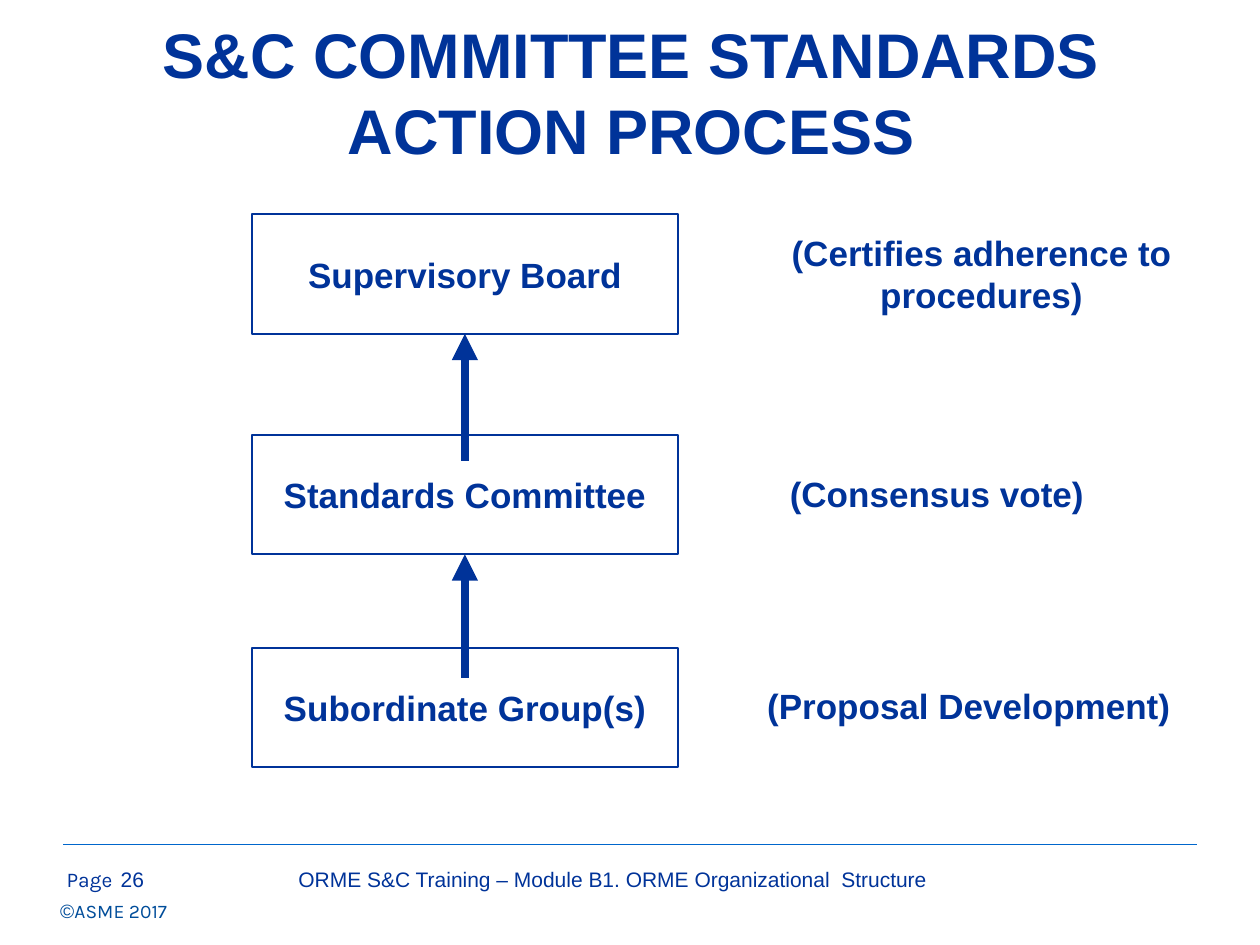
from lxml import etree
from pptx import Presentation
from pptx.dml.color import RGBColor
from pptx.enum.shapes import MSO_CONNECTOR, MSO_SHAPE
from pptx.enum.text import MSO_ANCHOR, PP_ALIGN
from pptx.oxml.ns import qn
from pptx.util import Inches, Pt

NAVY = "003399"
BOX_LEFT, BOX_WIDTH, BOX_HEIGHT = 2, 3.38, 0.95
LEVELS = [
    ("Supervisory Board", 1.7),
    ("Standards Committee", 3.45),
    ("Subordinate Group(s)", 5.14),
]
ROLES = [
    ("(Certifies adherence to procedures)", (5.83, 1.79, 3.92, 0.77), PP_ALIGN.CENTER),
    ("(Consensus vote)", (6.17, 3.7, 3.16, 0.43), PP_ALIGN.LEFT),
    ("(Proposal Development)", (5.99, 5.38, 3.51, 0.44), PP_ALIGN.LEFT),
]
ARROW_TAILS = [3.66, 5.38]


def paint(color_format, value):
    color_format.rgb = RGBColor.from_string(value)


def write(tf, text, size, bold=False, align=PP_ALIGN.LEFT, font="Arial", color=NAVY):
    tf.word_wrap = True
    p = tf.paragraphs[0]
    p.alignment = align
    p.add_run().text = text
    p.font.size = Pt(size)
    p.font.bold = bold
    p.font.name = font
    paint(p.font.color, color)


def add_text(slide, at, text, size, **style):
    sp = slide.shapes.add_textbox(*map(Inches, at))
    write(sp.text_frame, text, size, **style)
    return sp.text_frame


def add_box(slide, text, top):
    sp = slide.shapes.add_shape(
        MSO_SHAPE.RECTANGLE,
        *map(Inches, (BOX_LEFT, top, BOX_WIDTH, BOX_HEIGHT)),
    )
    sp.shadow.inherit = False
    sp.fill.background()
    paint(sp.line.color, NAVY)
    sp.line.width = Pt(1)
    write(sp.text_frame, text, 20, bold=True, align=PP_ALIGN.CENTER)
    sp.text_frame.vertical_anchor = MSO_ANCHOR.MIDDLE
    return sp


def add_line(slide, start, end, color, width):
    line = slide.shapes.add_connector(
        MSO_CONNECTOR.STRAIGHT, *map(Inches, (*start, *end))
    )
    paint(line.line.color, color)
    line.line.width = Pt(width)
    etree.SubElement(line._element.spPr, qn("a:effectLst"))
    return line


def add_arrow(slide, box, tail_y):
    x = BOX_LEFT + BOX_WIDTH / 2
    line = add_line(slide, (x, tail_y - 1), (x, tail_y), NAVY, 5)
    line.begin_connect(box, 2)
    ln = line.line._get_or_add_ln()
    etree.SubElement(ln, qn("a:headEnd"), type="triangle")


def add_footer(slide):
    add_line(slide, (0.5, 6.7), (9.5, 6.7), "0066CC", 0.75)
    add_text(slide, (0.43, 6.83, 2.33, 0.52), "Page", 12, font="Karla")
    add_text(slide, (0.86, 6.83, 0.47, 0.52), "26", 12)
    add_text(
        slide,
        (1.53, 6.83, 6.67, 0.52),
        "ORME S&C Training – Module B1. ORME Organizational  Structure",
        12,
        align=PP_ALIGN.CENTER,
    )
    tf = add_text(slide, (0.38, 7.09, 1.3, 0.29), "©", 11, color="004D9A")
    r = tf.paragraphs[0].add_run()
    r.text = "ASME 2017"
    r.font.name = "Karla"


def main():
    prs = Presentation()
    prs.slide_width, prs.slide_height = Inches(10), Inches(7.5)
    slide = prs.slides.add_slide(prs.slide_layouts[6])

    title = add_text(
        slide,
        (0.51, 0.1, 9, 1.25),
        "S&C COMMITTEE STANDARDS ACTION PROCESS",
        36,
        bold=True,
        align=PP_ALIGN.CENTER,
    )
    title.vertical_anchor = MSO_ANCHOR.MIDDLE

    boxes = [add_box(slide, text, top) for text, top in LEVELS]
    for box, tail_y in zip(boxes, ARROW_TAILS):
        add_arrow(slide, box, tail_y)
    for text, at, align in ROLES:
        add_text(slide, at, text, 20, bold=True, align=align)
    add_footer(slide)
    prs.save("out.pptx")


if __name__ == "__main__":
    main()
